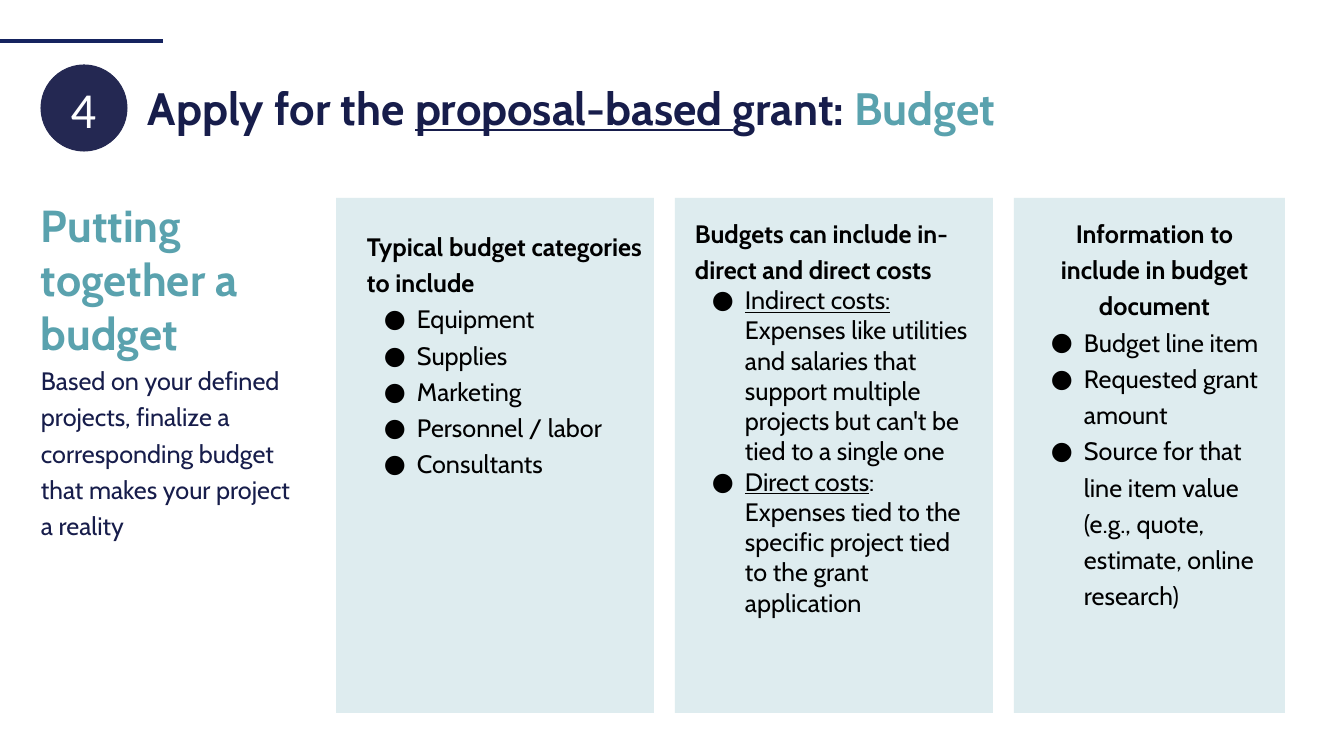
from lxml.etree import SubElement
from pptx import Presentation
from pptx.dml.color import RGBColor
from pptx.enum.shapes import MSO_CONNECTOR, MSO_SHAPE
from pptx.enum.text import MSO_ANCHOR, PP_ALIGN
from pptx.oxml.ns import qn
from pptx.util import Pt

PX = 12192000 / 1344
NAVY, TEAL, PALE, DISC, BLACK = "171D4B", "5AA2AE", "DEECEF", "242852", "000000"


def px(n):
    return round(n * PX)


def color(code):
    return RGBColor.from_string(code)


def add_box(shapes, box, inset=(10, 5), anchor=MSO_ANCHOR.TOP):
    frame = shapes.add_textbox(*map(px, box)).text_frame
    frame.word_wrap = True
    frame.vertical_anchor = anchor
    frame.margin_left = frame.margin_right = px(inset[0])
    frame.margin_top = frame.margin_bottom = px(inset[1])
    return frame


def add_para(frame, first=False, space=1.0, align=PP_ALIGN.LEFT):
    para = frame.paragraphs[0] if first else frame.add_paragraph()
    para.line_spacing = space
    para.alignment = align
    return para


def add_run(para, text, size=18, code=BLACK, bold=False, under=False, face="Cabin"):
    run = para.add_run()
    run.text = text
    font = run.font
    font.size, font.name, font.bold, font.underline = Pt(size), face, bold, under
    font.color.rgb = color(code)


def add_bullet(para):
    props = para._p.get_or_add_pPr()
    props.set("marL", str(px(50)))
    props.set("indent", str(-px(33)))
    tint = SubElement(props, qn("a:buClr"))
    SubElement(tint, qn("a:srgbClr"), val=BLACK)
    SubElement(props, qn("a:buFont"), typeface="Cabin")
    SubElement(props, qn("a:buChar"), char="●")


def add_fill(shapes, kind, box, code):
    shape = shapes.add_shape(kind, *map(px, box))
    shape.shadow.inherit = False
    shape.fill.solid()
    shape.fill.fore_color.rgb = color(code)
    shape.line.fill.background()
    return shape


def add_rule(shapes, x, y, width):
    rule = shapes.add_connector(MSO_CONNECTOR.STRAIGHT, px(x), px(y), px(x + width), px(y))
    rule.line.color.rgb = color("15235F")
    rule.line.width = Pt(3)
    SubElement(rule._element.spPr, qn("a:effectLst"))


def add_badge(shapes, x, y, side, text):
    group = shapes.add_group_shape().shapes
    disc = add_fill(group, MSO_SHAPE.OVAL, (x, y, side, side), DISC)
    disc.line.color.rgb = color(DISC)
    disc.line.width = Pt(0.75)
    frame = add_box(group, (x - 11, y, side + 21, side), (10, 10), MSO_ANCHOR.MIDDLE)
    para = add_para(frame, True, align=PP_ALIGN.CENTER)
    add_run(para, text, 36, "FFFFFF", face="Calibri")


def add_title(shapes, box):
    para = add_para(add_box(shapes, box, anchor=MSO_ANCHOR.MIDDLE), True)
    add_run(para, "Apply for the ", 32.4, NAVY, True)
    add_run(para, "proposal-based ", 32.4, NAVY, True, True)
    add_run(para, "grant: ", 32.4, NAVY, True)
    add_run(para, "Budget", 32.4, TEAL, True)


def add_intro(shapes, box):
    frame = add_box(shapes, box, (0, 0))
    add_run(add_para(frame, True), "Putting together a budget", 32, TEAL, True)
    add_run(add_para(frame, space=1.2),
            "Based on your defined projects, finalize a corresponding budget "
            "that makes your project a reality", code=NAVY)


def add_card(shapes, box, inner, head, items, space=1.2, align=PP_ALIGN.LEFT):
    """Each item is a pair: an underlined lead and plain text; inner is relative to box."""
    add_fill(shapes, MSO_SHAPE.RECTANGLE, box, PALE)
    dx, dy, width, height = inner
    frame = add_box(shapes, (box[0] + dx, box[1] + dy, width, height))
    add_run(add_para(frame, True, 1.2, align), head, bold=True)
    for lead, text in items:
        para = add_para(frame, space=space)
        add_bullet(para)
        if lead:
            add_run(para, lead, under=True)
        add_run(para, text)


def add_cards(shapes, x, y, height, gap):
    kinds = ["Equipment", "Supplies", "Marketing", "Personnel / labor", "Consultants"]
    costs = [
        ("Indirect costs:", " Expenses like utilities and salaries that support "
                            "multiple projects but can't be tied to a single one"),
        ("Direct costs", ": Expenses tied to the specific project tied "
                         "to the grant application"),
    ]
    facts = ["Budget line item", "Requested grant amount",
             "Source for that line item value (e.g., quote, estimate, online research)"]
    cards = [
        (318, (21, 22, 297, 276), "Typical budget categories to include",
         [("", kind) for kind in kinds], 1.2, PP_ALIGN.LEFT),
        (318, (10, 9, 297, 460), "Budgets can include in-direct and direct costs",
         costs, 1.0, PP_ALIGN.LEFT),
        (271, (10, 9, 261, 422), "Information to include in budget document",
         [("", fact) for fact in facts], 1.2, PP_ALIGN.CENTER),
    ]
    for width, *rest in cards:
        add_card(shapes, (x, y, width, height), *rest)
        x += width + gap


def main():
    deck = Presentation()
    deck.slide_width, deck.slide_height = px(1344), px(756)
    shapes = deck.slides.add_slide(deck.slide_layouts[6]).shapes
    add_rule(shapes, 0, 41, 163)
    add_title(shapes, (138, 74, 1147, 66))
    add_badge(shapes, 41, 65, 86, "4")
    add_intro(shapes, (41, 198, 254, 360))
    add_cards(shapes, 336, 198, 515, 21)
    deck.save("out.pptx")


if __name__ == "__main__":
    main()
